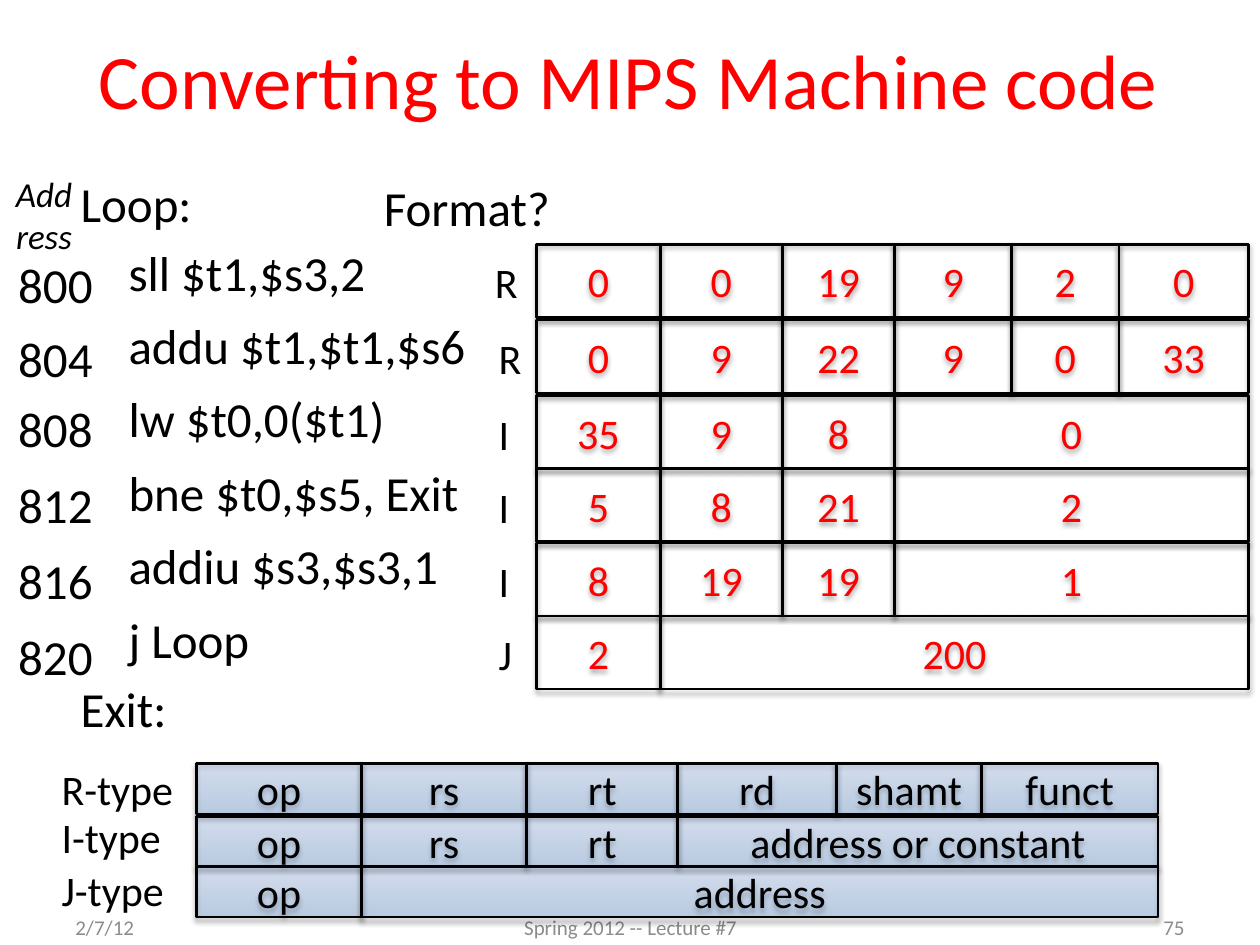
from pptx import Presentation
from pptx.dml.color import RGBColor as RGB
from pptx.enum.shapes import MSO_SHAPE as Shape
from pptx.enum.text import MSO_ANCHOR as Anchor, MSO_AUTO_SIZE as Fit, PP_ALIGN as Align
from pptx.oxml import parse_xml
from pptx.oxml.ns import nsdecls, qn
from pptx.util import Inches, Pt
from lxml.etree import SubElement as Sub

HUES = {"ink": "000000", "red": "FF0000", "gray": "8C8C8C",
        "low": "3F80CE", "high": "A4C4FF"}

# address, top of its label, code, format, fields
CODE = [
    ("800", 1.97, "sll $t1,$s3,2", "R", [0, 0, 19, 9, 2, 0]),
    ("804", 2.56, "addu $t1,$t1,$s6", "R", [0, 9, 22, 9, 0, 33]),
    ("808", 3.11, "lw $t0,0($t1)", "I", [35, 9, 8, 0]),
    ("812", 3.72, "bne $t0,$s5, Exit", "I", [5, 8, 21, 2]),
    ("816", 4.32, "addiu $s3,$s3,1", "I", [8, 19, 19, 1]),
    ("820", 4.92, "j Loop", "J", [2, 200]),
]
TOPS = [1.94, 2.54, 3.14, 3.72, 4.31, 4.89]
TYPES = [
    ("R-type", 6.06, 6.01, ["op", "rs", "rt", "rd", "shamt", "funct"]),
    ("I-type", 6.48, 6.39, ["op", "rs", "rt", "address or constant"]),
    ("J-type", 6.88, 6.81, ["op", "address"]),
]
# column edges, measured from the left of each grid
FIELDS = [0, 0.98, 1.95, 2.84, 3.77, 4.62, 5.65]
PARTS = [0, 1.31, 2.62, 3.82, 5.08, 6.23, 7.63]


def write(para, text, size=24, color="ink", align=None, italic=None):
    run = para.add_run()
    run.text = text
    font = run.font
    font.name, font.size, font.italic = "Calibri", Pt(size), italic
    font.color.rgb = RGB.from_string(HUES[color])
    if align is not None:
        para.alignment = align


def place(shape, box):
    shape.left, shape.top, shape.width, shape.height = map(Inches, box)


def label(slide, box, text, wrap=False, anchor=Anchor.TOP, **form):
    frame = slide.shapes.add_textbox(*map(Inches, box)).text_frame
    frame.word_wrap = wrap
    frame.vertical_anchor = anchor
    write(frame.paragraphs[0], text, **form)


def shade(shape):
    """Fill with a pale, see-through blue gradient, darker at the bottom."""
    shape.fill.gradient()
    shape.fill.gradient_angle = 90
    for stop, pos, hue in zip(shape.fill.gradient_stops, (0, 1), ("low", "high")):
        stop.position = pos
        stop.color.rgb = RGB.from_string(HUES[hue])
    for tint in shape.element.spPr.find(qn("a:gradFill")).iter(qn("a:srgbClr")):
        Sub(tint, qn("a:alpha"), val="27000")


def cast(shape):
    """Give the shape a soft shadow straight below it."""
    shape.shadow.inherit = False
    shape.element.spPr.find(qn("a:effectLst")).append(parse_xml(
        f'<a:outerShdw {nsdecls("a")} blurRad="{Pt(3.1)}" dist="{Pt(1.8)}" '
        f'dir="5400000" rotWithShape="0"><a:srgbClr val="{HUES["ink"]}">'
        '<a:alpha val="35000"/></a:srgbClr></a:outerShdw>'))


def cell(slide, box, text, color, filled):
    shape = slide.shapes.add_shape(Shape.RECTANGLE, *map(Inches, box))
    if filled:
        shade(shape)
    else:
        shape.fill.background()
    shape.line.color.rgb = RGB.from_string(HUES["ink"])
    shape.line.width = Pt(1.5)
    cast(shape)
    frame = shape.text_frame
    frame.vertical_anchor = Anchor.MIDDLE
    write(frame.paragraphs[0], text, color=color, align=Align.CENTER)


def row(slide, box, edges, items, color="ink", filled=False):
    """Lay out cells along the edges; the last one runs to the end."""
    left, top, _, high = box
    ends = edges[1:len(items)] + edges[-1:]
    for item, start, end in zip(items, edges, ends):
        cell(slide, (left + start, top, end - start, high), str(item), color, filled)


def title(slide, box):
    shape = slide.shapes.title
    place(shape, box)
    frame = shape.text_frame
    frame.vertical_anchor = Anchor.MIDDLE
    write(frame.paragraphs[0], "Converting to MIPS Machine code",
          size=44, color="red", align=Align.CENTER)


def listing(slide, box):
    shape = slide.placeholders[1]
    place(shape, box)
    frame = shape.text_frame
    frame.auto_size = Fit.NONE
    lines = ["Loop:", *("\t" + code for _, _, code, _, _ in CODE), "Exit:"]
    for i, line in enumerate(lines):
        para = frame.add_paragraph() if i else frame.paragraphs[0]
        props = para._p.get_or_add_pPr()
        props.set("marL", str(Inches(0.38)))
        props.set("indent", str(-Inches(0.38)))
        Sub(Sub(props, qn("a:spcBef")), qn("a:spcPct"), val="20000")
        Sub(props, qn("a:buNone"))
        if line.startswith("\t"):
            write(para, "\t", size=28 if i == 1 else 30)
        write(para, line.strip(), size=28)


def machine(slide, box):
    """Addresses, format letters and the fields of each instruction."""
    left, _, wide, _ = box
    label(slide, (2.94, 1.36, 1.53, 0.57), "Format?", size=28, align=Align.CENTER)
    label(slide, (0, 1.32, 0.7, 0.77), "Address", wrap=True, size=20,
          italic=True, align=Align.CENTER)
    for (spot, y, _, kind, items), top in zip(CODE, TOPS):
        label(slide, (0.04, y, 0.8, 0.57), spot, size=28, align=Align.CENTER)
        row(slide, (left, top, wide, 0.58), FIELDS, items, color="red")
        inset = 0.43 if top == TOPS[0] else 0.4
        label(slide, (left - inset, top + 0.05, 0.38, 0.5), kind)


def formats(slide, box):
    left, _, wide, _ = box
    for name, top, y, parts in TYPES:
        row(slide, (left, top, wide, 0.4), PARTS, parts, filled=True)
        label(slide, (0.39, y, 1.1, 0.5), name)


def footer(slide, box):
    _, top, _, high = box
    for left, wide, text, align in (
            (0.5, 2.33, "2/7/12", Align.LEFT),
            (3.42, 3.17, "Spring 2012 -- Lecture #7", Align.CENTER),
            (7.17, 2.33, "75", Align.RIGHT)):
        label(slide, (left, top, wide, high), text, wrap=True,
              anchor=Anchor.MIDDLE, size=12, color="gray", align=align)


def main():
    deck = Presentation()
    deck.slide_width, deck.slide_height = Inches(10), Inches(7.5)
    slide = deck.slides.add_slide(deck.slide_layouts[1])
    title(slide, (0.49, 0, 9, 1.25))
    listing(slide, (0.54, 1.33, 4.04, 4.95))
    footer(slide, (0.5, 7.16, 9, 0.4))
    formats(slide, (1.56, 6.06, 7.63, 1.22))
    machine(slide, (4.26, 1.94, 5.65, 3.53))
    deck.save("out.pptx")


if __name__ == "__main__":
    main()
